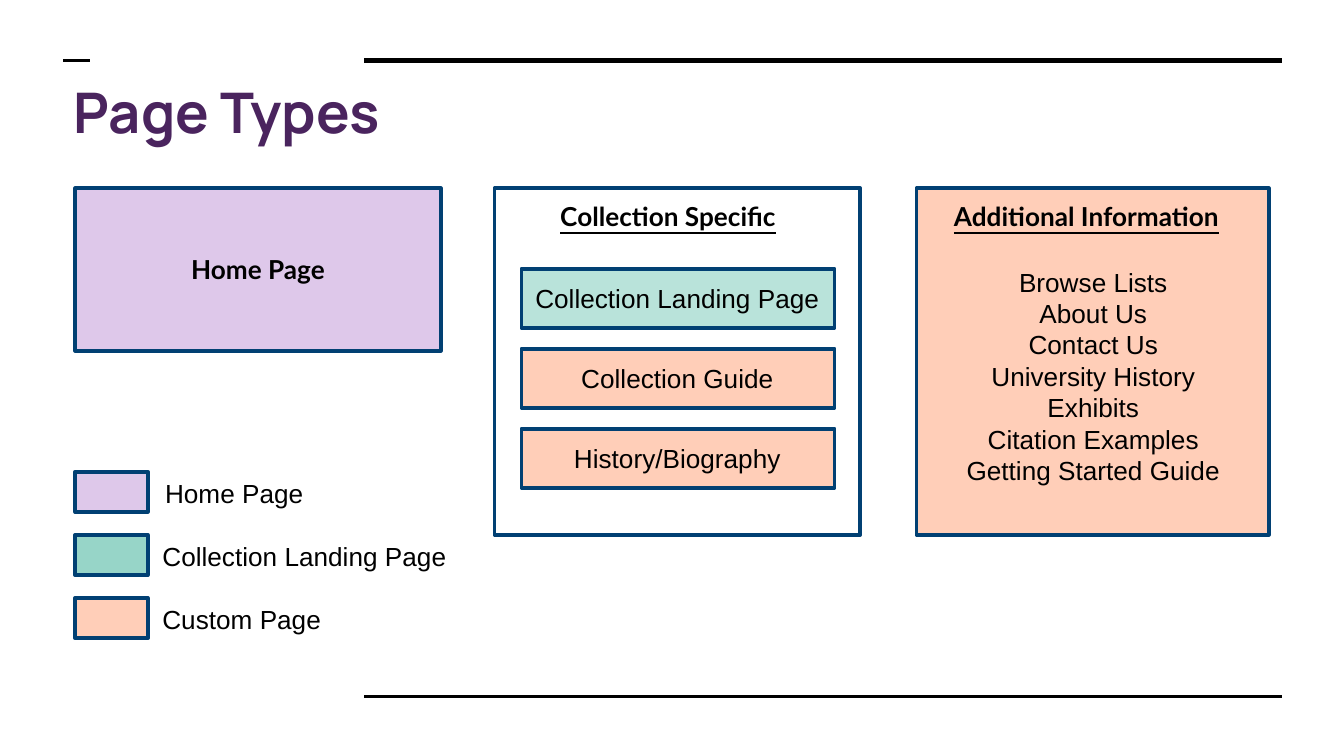
from pptx import Presentation
from pptx.dml.color import RGBColor
from pptx.enum.shapes import MSO_CONNECTOR, MSO_SHAPE
from pptx.enum.text import MSO_ANCHOR, MSO_AUTO_SIZE, PP_ALIGN
from pptx.oxml.ns import qn
from pptx.util import Inches, Pt

COLORS = {
    "ink": "000000", "title": "4A245E", "border": "014073",
    "home": "DEC8EA", "landing": "97D5C8", "landing_light": "B9E3DA",
    "custom": "FFCEB8",
}
CELL = 0.1  # inches per grid column and row


def rgb(name):
    return RGBColor.from_string(COLORS[name])


def grid(*cells):
    return [Inches(c * CELL) for c in cells]


def write(tf, text, size=14, font="Arial", color="ink", bold=False,
          underline=False, align=PP_ALIGN.LEFT, anchor=MSO_ANCHOR.TOP,
          fit=MSO_AUTO_SIZE.NONE):
    """Fill a text frame with one plain paragraph per line of text."""
    tf.word_wrap = True
    tf.auto_size = fit
    tf.vertical_anchor = anchor
    for i, line in enumerate(text.split("\n")):
        p = tf.paragraphs[0] if i == 0 else tf.add_paragraph()
        p.alignment = align
        p.space_before = Pt(0)
        pPr = p._p.get_or_add_pPr()
        pPr.set("marL", "0")
        pPr.set("indent", "0")
        pPr.append(pPr.makeelement(qn("a:buNone"), {}))
        r = p.add_run()
        r.text = line
        r.font.size = Pt(size)
        r.font.name = font
        r.font.bold = bold
        r.font.underline = underline
        r.font.color.rgb = rgb(color)


class SlideBuilder:
    def __init__(self, slide):
        self.s = slide

    def rule(self, left, right, row, weight):
        x1, x2, y = grid(left, right, row)
        sp = self.s.shapes.add_connector(MSO_CONNECTOR.STRAIGHT, x1, y, x2, y)
        sp.line.color.rgb = rgb("ink")
        sp.line.width = Pt(weight)
        spPr = sp._element.spPr
        spPr.append(spPr.makeelement(qn("a:effectLst"), {}))

    def box(self, place, fill=None):
        sp = self.s.shapes.add_shape(MSO_SHAPE.RECTANGLE, *grid(*place))
        sp.shadow.inherit = False
        if fill:
            sp.fill.solid()
            sp.fill.fore_color.rgb = rgb(fill)
        else:
            sp.fill.background()
        sp.line.color.rgb = rgb("border")
        sp.line.width = Pt(2)
        return sp

    def label(self, place, text, **style):
        sp = self.s.shapes.add_textbox(*grid(*place))
        write(sp.text_frame, text, fit=MSO_AUTO_SIZE.SHAPE_TO_FIT_TEXT, **style)

    def placeholder(self, index, place, text, **style):
        sp = self.s.placeholders[index]
        sp.left, sp.top, sp.width, sp.height = grid(*place)
        write(sp.text_frame, text, **style)
        sp.element.getparent().append(sp.element)  # bring to front
        return sp


def main():
    prs = Presentation()
    prs.slide_width, prs.slide_height = Inches(10), Inches(10 * 9 / 16)
    b = SlideBuilder(prs.slides.add_slide(prs.slide_layouts[1]))
    center = PP_ALIGN.CENTER
    heading = {"font": "Lato", "bold": True}

    # Frame rules and title
    b.rule(27.1, 95.4, 4.5, 3)
    b.rule(27.1, 95.4, 51.8, 1.5)
    b.rule(4.7, 6.7, 4.5, 1.5)
    title = b.placeholder(0, (4.5, 4.8, 69.1, 6.9), "Page Types", size=30,
                          font="Manrope", color="title", bold=True,
                          anchor=MSO_ANCHOR.MIDDLE)
    title.text_frame.margin_top = title.text_frame.margin_bottom = Inches(0.1)

    # Home page
    home = b.box((5.6, 14, 27.2, 12.1), "home")
    write(home.text_frame, "Home Page", align=center,
          anchor=MSO_ANCHOR.MIDDLE, **heading)

    # Collection pages
    b.box((36.8, 14, 27.2, 25.8))
    b.label((40.7, 14.4, 18.5, 3.4), "Collection Specific",
            underline=True, **heading)
    pages = [("Collection Landing Page", "landing_light"),
             ("Collection Guide", "custom"), ("History/Biography", "custom")]
    for i, (name, fill) in enumerate(pages):
        top = 20 + 5.95 * i
        b.box((38.8, top, 23.3, 4.4), fill)
        b.label((38.75, top + 0.5, 23.3, 3.4), name, align=center)

    # Additional information
    b.box((68.2, 14, 26.2, 25.8), "custom")
    b.label((70, 14.4, 22.7, 3.4), "Additional Information",
            underline=True, **heading)
    b.placeholder(1, (70, 19.3, 22.7, 19.9),
                  "Browse Lists\nAbout Us\nContact Us\nUniversity History\n"
                  "Exhibits\nCitation Examples\nGetting Started Guide",
                  align=center)

    # Legend
    legend = [("Home Page", "home", 11.3, 12.6),
              ("Collection Landing Page", "landing", 11.1, 23.5),
              ("Custom Page", "custom", 11.1, 14)]
    for i, (name, fill, left, width) in enumerate(legend):
        top = 35.1 + 4.7 * i
        b.box((5.6, top, 5.4, 3), fill)
        b.label((left, top - 0.1, width, 3.4), name)

    prs.save("out.pptx")


if __name__ == "__main__":
    main()
